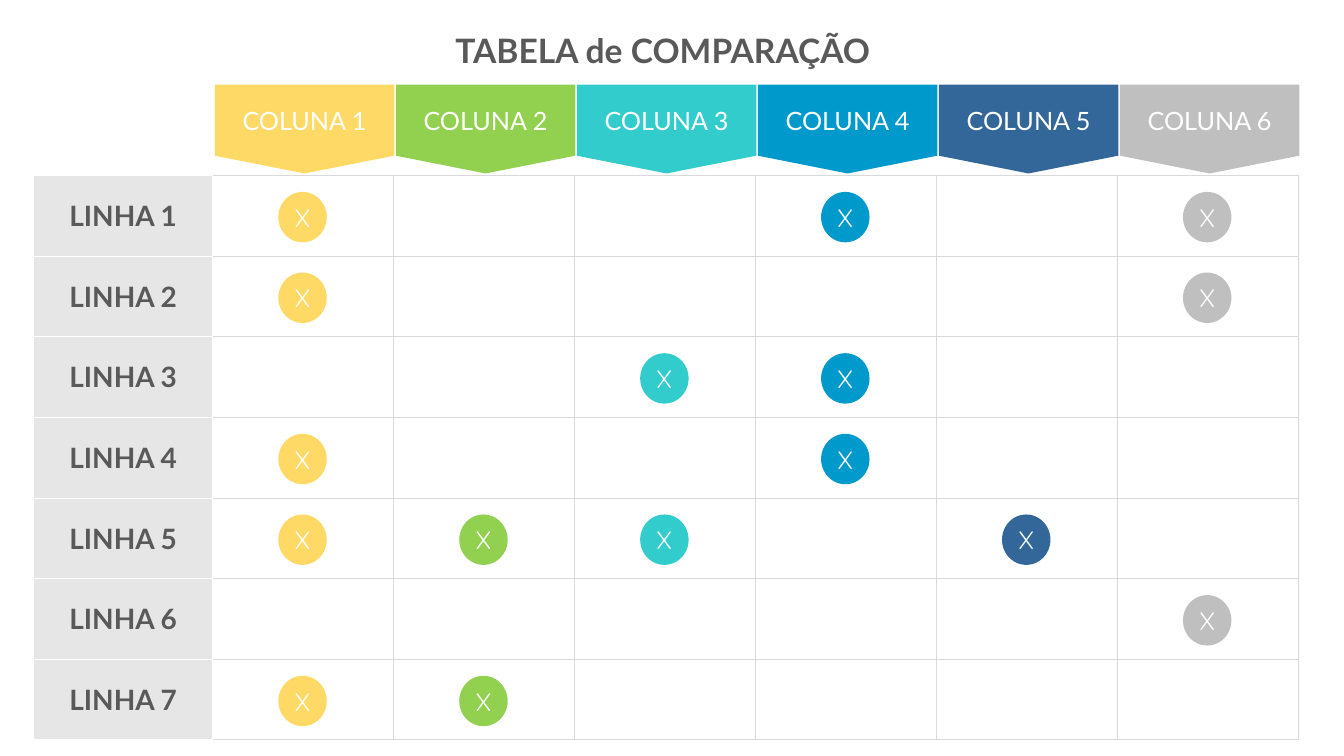
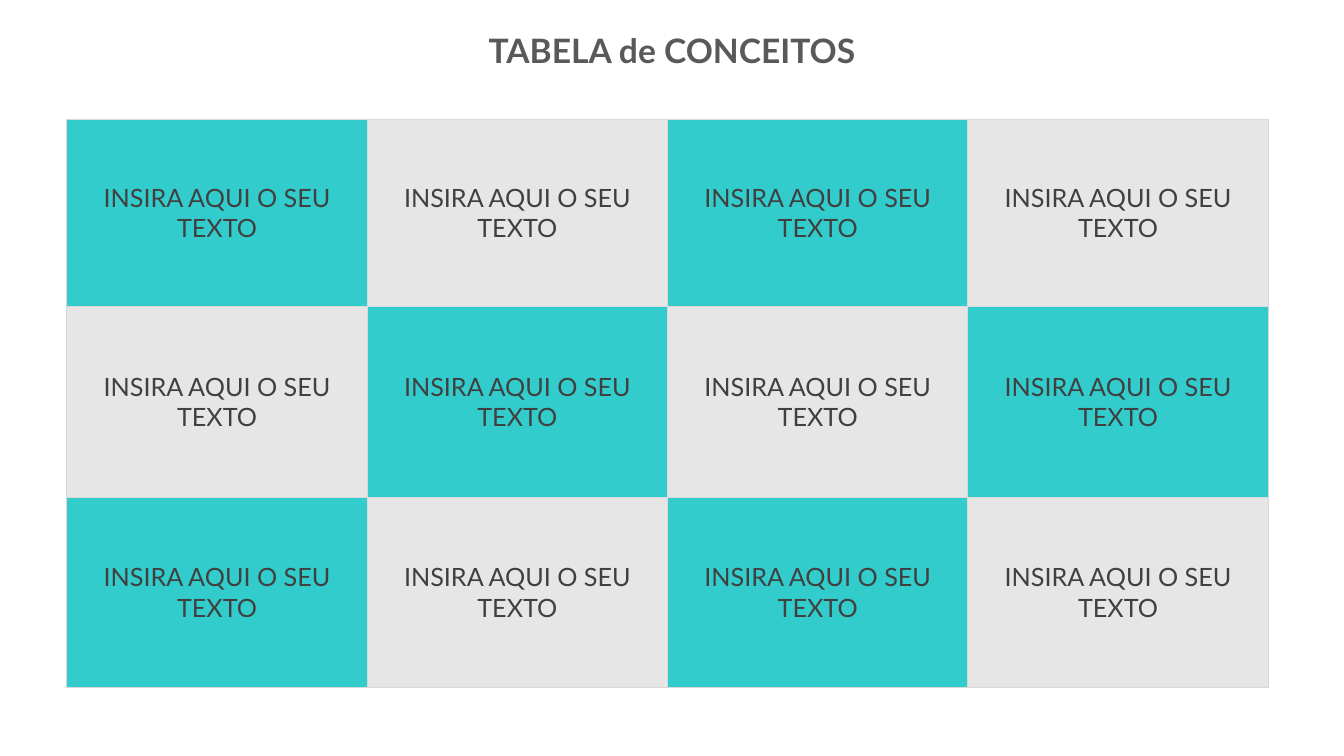
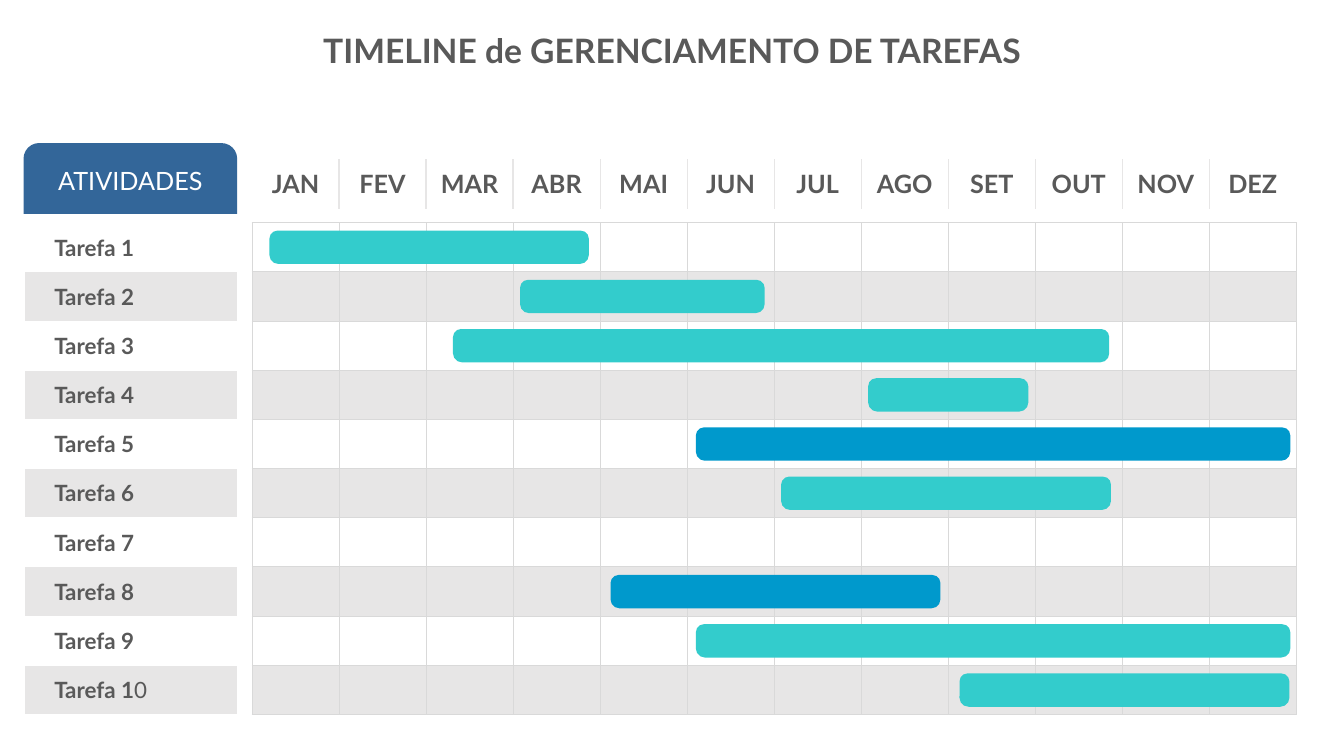
from lxml.etree import SubElement
from pptx import Presentation
from pptx.dml.color import RGBColor
from pptx.enum.shapes import MSO_SHAPE
from pptx.enum.text import MSO_ANCHOR, MSO_AUTO_SIZE, PP_ALIGN
from pptx.oxml.ns import qn
from pptx.util import Pt

HUES = {
    "yellow": "FFD966", "green": "92D050", "teal": "33CCCC",
    "blue": "0099CC", "navy": "336699", "silver": "BFBFBF",
    "pale": "E7E6E6", "rule": "D9D9D9", "white": "FFFFFF",
    "text": "595959", "dark": "404040",
}
FACE = "Lato"
COLS = ["yellow", "green", "teal", "blue", "navy", "silver"]
# Marked columns in each line of the comparison
MARKS = [(0, 3, 5), (0, 5), (2, 3), (0, 3), (0, 1, 2, 4), (5,), (0, 1)]
MONTHS = "JAN FEV MAR ABR MAI JUN JUL AGO SET OUT NOV DEZ".split()
# Task row, first month, length in months, colour
BARS = [
    (0, 0.2, 3.67, "teal"), (1, 3.08, 2.81, "teal"),
    (2, 2.31, 7.54, "teal"), (3, 7.08, 1.84, "teal"),
    (4, 5.1, 6.83, "blue"), (5, 6.08, 3.79, "teal"),
    (7, 4.12, 3.79, "blue"), (8, 5.1, 6.83, "teal"),
    (9, 8.13, 3.79, "teal"),
]


def rgb(hue):
    return RGBColor.from_string(HUES[hue])


def write(para, text, size, hue="white", bold=False, face=FACE,
          align=PP_ALIGN.CENTER):
    para.text = text
    para.alignment = align
    font = para.font
    font.size, font.bold, font.name = Pt(size), bold, face
    font.color.rgb = rgb(hue)


def shape(slide, kind, box, hue):
    item = slide.shapes.add_shape(kind, *map(Pt, box))
    item.shadow.inherit = False
    item.fill.solid()
    item.fill.fore_color.rgb = rgb(hue)
    item.line.fill.background()
    frame = item.text_frame
    frame.vertical_anchor = MSO_ANCHOR.MIDDLE
    frame.word_wrap = True
    return item


def border(cell, hue, width, sides):
    props = cell._tc.get_or_add_tcPr()
    for side in "LRTB":
        line = SubElement(props, qn(f"a:ln{side}"), w=str(Pt(width)))
        if side in sides:
            fill = SubElement(line, qn("a:solidFill"))
            SubElement(fill, qn("a:srgbClr"), val=HUES[hue])
        else:
            SubElement(line, qn("a:noFill"))


def grid(slide, box, rows, cols, paint, hue="rule", width=0.75,
         sides=lambda col: "LRTB", highs=None):
    """Add a table; paint(row, col) names a cell's fill, or None."""
    table = slide.shapes.add_table(rows, cols, *map(Pt, box)).table
    table.first_row = table.horz_banding = False
    for col in table.columns:
        col.width = Pt(box[2] / cols)
    for row, high in zip(table.rows, highs or [box[3] / rows] * rows):
        row.height = Pt(high)
    for num, cell in enumerate(table.iter_cells()):
        row, col = divmod(num, cols)
        border(cell, hue, width, sides(col))
        fill = paint(row, col)
        if fill:
            cell.fill.solid()
            cell.fill.fore_color.rgb = rgb(fill)
        else:
            cell.fill.background()
        cell.vertical_anchor = MSO_ANCHOR.MIDDLE
    return table


def start(deck, text, mid=480):
    """Add a slide with its title centred on mid."""
    slide = deck.slides.add_slide(deck.slide_layouts[5])
    title = slide.shapes.title
    title.left, title.top = Pt(mid - 300), Pt(18)
    title.width, title.height = Pt(600), Pt(36)
    frame = title.text_frame
    frame.auto_size = MSO_AUTO_SIZE.NONE
    frame.vertical_anchor = MSO_ANCHOR.MIDDLE
    write(frame.paragraphs[0], text, 24, "text", True)
    return slide


# Comparison: column tabs, line labels and marks
def tabs(slide, box):
    left, top, wide, high = box
    step = wide / len(COLS)
    for num, hue in enumerate(COLS):
        tab = shape(slide, MSO_SHAPE.FLOWCHART_OFFPAGE_CONNECTOR,
                    (left + num * step, top, step - 1.1, high), hue)
        write(tab.text_frame.paragraphs[0], f"COLUNA {num + 1}", 18)


def labels(slide, box):
    table = grid(slide, box, len(MARKS), 1, lambda r, c: "pale", "white")
    for num, cell in enumerate(table.iter_cells(), 1):
        write(cell.text_frame.paragraphs[0], f"LINHA {num}", 20, "text", True)


def marks(slide, box):
    left, top, wide, high = box
    grid(slide, box, len(MARKS), len(COLS), lambda r, c: None)
    across, down = wide / len(COLS), high / len(MARKS)
    for row, cols in enumerate(MARKS):
        for col in cols:
            spot = (left + col * across + 46.8, top + row * down + 11.8,
                    34.6, 36)
            frame = shape(slide, MSO_SHAPE.OVAL, spot, COLS[col]).text_frame
            frame.margin_left = frame.margin_right = 0
            write(frame.paragraphs[0], "X", 18, face="Quicksand")


# Concepts: checkered cells
def checks(slide, box):
    table = grid(slide, box, 3, 4,
                 lambda r, c: "pale" if (r + c) % 2 else "teal",
                 highs=[134, 136, 136])
    for cell in table.iter_cells():
        write(cell.text_frame.paragraphs[0], "INSIRA AQUI O SEU TEXTO",
              18, "dark")


# Timeline: task list, months and bars
def head(slide, box):
    item = shape(slide, MSO_SHAPE.ROUND_2_SAME_RECTANGLE, box, "navy")
    item.adjustments[0] = 0.22
    write(item.text_frame.paragraphs[0], "ATIVIDADES", 18)


def tasks(slide, box):
    table = grid(slide, box, 10, 1,
                 lambda r, c: "pale" if r % 2 else "white", "white")
    for num, cell in enumerate(table.iter_cells(), 1):
        para = cell.text_frame.paragraphs[0]
        write(para, f"Tarefa {str(num)[0]}", 16, "text", True,
              align=PP_ALIGN.LEFT)
        para.space_before = Pt(6)
        para._p.get_or_add_pPr().set("marL", str(Pt(14.4)))
        if num == 10:
            run = para.add_run()
            run.text = "0"
            run.font.bold = False


def months(slide, box):
    last = len(MONTHS) - 1
    table = grid(slide, box, 1, len(MONTHS), lambda r, c: None, "pale", 1,
                 lambda c: "L" * (c > 0) + "R" * (c < last))
    for name, cell in zip(MONTHS, table.iter_cells()):
        write(cell.text_frame.paragraphs[0], name, 18, "text", True)


def bars(slide, box):
    left, top, wide, high = box
    grid(slide, box, 10, len(MONTHS), lambda r, c: "pale" if r % 2 else None)
    across, down, thick = wide / len(MONTHS), high / 10, 23.8
    for row, first, span, hue in BARS:
        spot = (left + first * across, top + row * down + (down - thick) / 2,
                span * across, thick)
        bar = shape(slide, MSO_SHAPE.ROUND_2_SAME_RECTANGLE, spot, hue)
        bar.adjustments[0], bar.adjustments[1] = 0.24, 0.27


def main():
    deck = Presentation()
    deck.slide_width, deck.slide_height = Pt(960), Pt(540)

    slide = start(deck, "TABELA de COMPARAÇÃO", 473.4)
    marks(slide, (152, 125.3, 775.4, 403.2))
    labels(slide, (24, 125.3, 128, 403.2))
    tabs(slide, (153.4, 60.5, 775.8, 63.4))

    slide = start(deck, "TABELA de CONCEITOS")
    checks(slide, (47.8, 85, 858.2, 406))

    slide = start(deck, "TIMELINE de GERENCIAMENTO DE TAREFAS")
    head(slide, (16.8, 102.2, 152.6, 50.6))
    tasks(slide, (17.2, 159.1, 152.6, 351.4))
    months(slide, (180, 113.8, 746, 35.3))
    bars(slide, (180, 159.1, 746, 351.4))

    deck.save("out.pptx")


if __name__ == "__main__":
    main()
